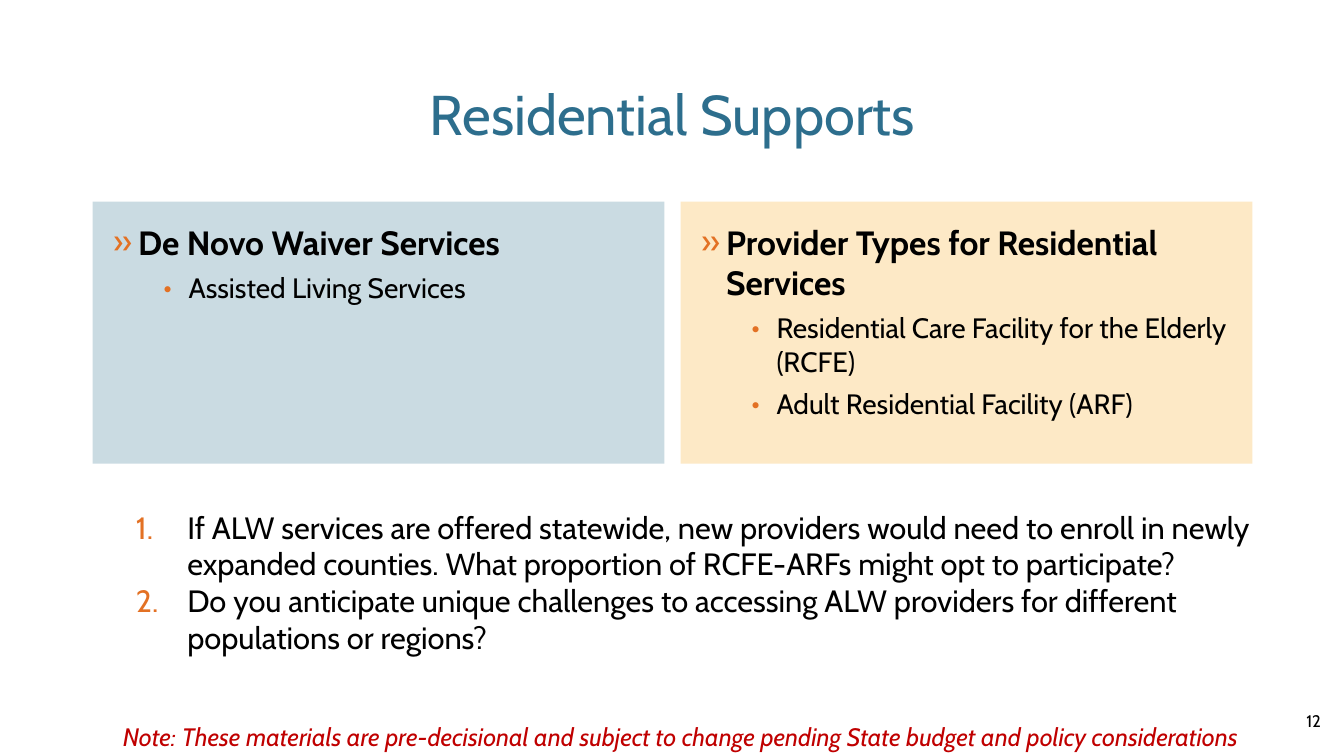
from lxml.etree import SubElement
from pptx import Presentation
from pptx.dml.color import RGBColor
from pptx.enum.text import MSO_ANCHOR, MSO_AUTO_SIZE, PP_ALIGN
from pptx.oxml.ns import qn
from pptx.util import Inches, Pt

SLIDE_WIDTH, SLIDE_HEIGHT = 13.33, 7.5
BLACK, TEAL, ORANGE, RED = "000000", "2D6E8D", "E37124", "C00000"
PALE_BLUE, PALE_YELLOW = "CADBE2", "FDE9C6"
MARGIN, PANEL_WIDTH, PANEL_GAP = 6.9, 42.53, 1.22


def color(value):
    """Turn a hex string into a colour."""
    return RGBColor.from_string(value)


def assign(target, values):
    """Set every attribute named in a dict of format values."""
    for name, value in values.items():
        setattr(target, name, value)


class SlideBuilder:
    """Hold the font and slide, and place elements in percent of its size."""

    def __init__(self, slide, font_name):
        """Keep the slide and its font name."""
        self.slide = slide
        self.font_name = font_name

    def place(self, shape, left, top, width, height):
        """Move a shape to a place given in percent of the slide."""
        assign(shape, {
            "left": Inches(left * SLIDE_WIDTH / 100),
            "top": Inches(top * SLIDE_HEIGHT / 100),
            "width": Inches(width * SLIDE_WIDTH / 100),
            "height": Inches(height * SLIDE_HEIGHT / 100),
        })

    def frame(self, shape, **values):
        """Prepare the text frame of a shape."""
        assign(shape.text_frame, {"word_wrap": True, "auto_size": MSO_AUTO_SIZE.NONE, **values})
        return shape.text_frame

    def add_text(self, paragraph, text, size, text_color=BLACK, align=PP_ALIGN.LEFT, after=0, **font):
        """Add one formatted run to a paragraph."""
        assign(paragraph, {"alignment": align, "line_spacing": 1.0,
                           "space_before": Pt(0), "space_after": Pt(after)})
        run = paragraph.add_run()
        run.text = text
        assign(run.font, {"name": self.font_name, "size": Pt(size), **font})
        run.font.color.rgb = color(text_color)

    def bullet(self, paragraph, margin, hanging, tag, **mark):
        """Give a paragraph an orange marker and a hanging indent."""
        properties = paragraph._p.get_or_add_pPr()
        properties.set("marL", str(Inches(margin)))
        properties.set("indent", str(-Inches(hanging)))
        marker_color = SubElement(properties, qn("a:buClr"))
        SubElement(marker_color, qn("a:srgbClr"), val=ORANGE)
        SubElement(properties, qn("a:buFont"), typeface=self.font_name)
        SubElement(properties, qn(tag), **mark)

    def title(self, text, place):
        """Fill the title placeholder."""
        shape = self.slide.shapes.title
        self.place(shape, *place)
        frame = self.frame(shape, vertical_anchor=MSO_ANCHOR.MIDDLE)
        self.add_text(frame.paragraphs[0], text, 40, TEAL, PP_ALIGN.CENTER)

    def panel(self, index, fill, heading, items, place):
        """Fill a body placeholder with a heading and its items."""
        shape = self.slide.placeholders[index]
        self.place(shape, *place)
        shape.fill.solid()
        shape.fill.fore_color.rgb = color(fill)
        inset = Inches(0.2)
        frame = self.frame(shape, vertical_anchor=MSO_ANCHOR.TOP,
                           margin_left=inset, margin_top=inset, margin_right=inset)
        paragraph = frame.paragraphs[0]
        self.bullet(paragraph, 0.25, 0.25, "a:buChar", char="»")
        self.add_text(paragraph, heading, 24, after=6, bold=True)
        for item in items:
            paragraph = frame.add_paragraph()
            paragraph.level = 1
            self.bullet(paragraph, 0.75, 0.25, "a:buChar", char="•")
            self.add_text(paragraph, item, 20, after=6, bold=False)

    def text_box(self, place, anchor):
        """Add an empty text box and return its frame."""
        shape = self.slide.shapes.add_textbox(0, 0, 0, 0)
        self.place(shape, *place)
        return self.frame(shape, vertical_anchor=anchor)

    def numbered_list(self, items, place):
        """Add a text box of numbered questions."""
        frame = self.text_box(place, MSO_ANCHOR.MIDDLE)
        for position, item in enumerate(items):
            paragraph = frame.add_paragraph() if position else frame.paragraphs[0]
            self.bullet(paragraph, 0.74, 0.51, "a:buAutoNum", type="arabicPeriod")
            self.add_text(paragraph, item, 22)

    def label(self, text, place, anchor, size, **style):
        """Add a text box with one line."""
        self.add_text(self.text_box(place, anchor).paragraphs[0], text, size, **style)


def main():
    """Build and save the slide."""
    presentation = Presentation()
    assign(presentation, {"slide_width": Inches(SLIDE_WIDTH), "slide_height": Inches(SLIDE_HEIGHT)})
    slide = presentation.slides.add_slide(presentation.slide_layouts.get_by_name("Two Content"))
    builder = SlideBuilder(slide, "Cabin")
    builder.title("Residential Supports", (MARGIN, 5.33, 86.27, 19.33))
    panels = [
        (PALE_BLUE, "De Novo Waiver Services", ["Assisted Living Services"]),
        (PALE_YELLOW, "Provider Types for Residential Services",
         ["Residential Care Facility for the Elderly (RCFE)", "Adult Residential Facility (ARF)"]),
    ]
    for column, (fill, heading, items) in enumerate(panels):
        left = MARGIN + column * (PANEL_WIDTH + PANEL_GAP)
        builder.panel(column + 1, fill, heading, items, (left, 26.67, PANEL_WIDTH, 34.67))
    builder.numbered_list([
        "If ALW services are offered statewide, new providers would need to enroll in newly "
        "expanded counties. What proportion of RCFE-ARFs might opt to participate?",
        "Do you anticipate unique challenges to accessing ALW providers for different "
        "populations or regions?",
    ], (7.65, 64.4, 86.72, 25.2))
    builder.label("Note: These materials are pre-decisional and subject to change pending "
                  "State budget and policy considerations", (1.65, 94.8, 97.97, 3.73),
                  MSO_ANCHOR.TOP, 18, text_color=RED, align=PP_ALIGN.CENTER, italic=True)
    builder.label("12", (76.52, 92.67, 22.51, 5.33), MSO_ANCHOR.MIDDLE, 12, align=PP_ALIGN.RIGHT)
    presentation.save("out.pptx")


if __name__ == "__main__":
    main()
